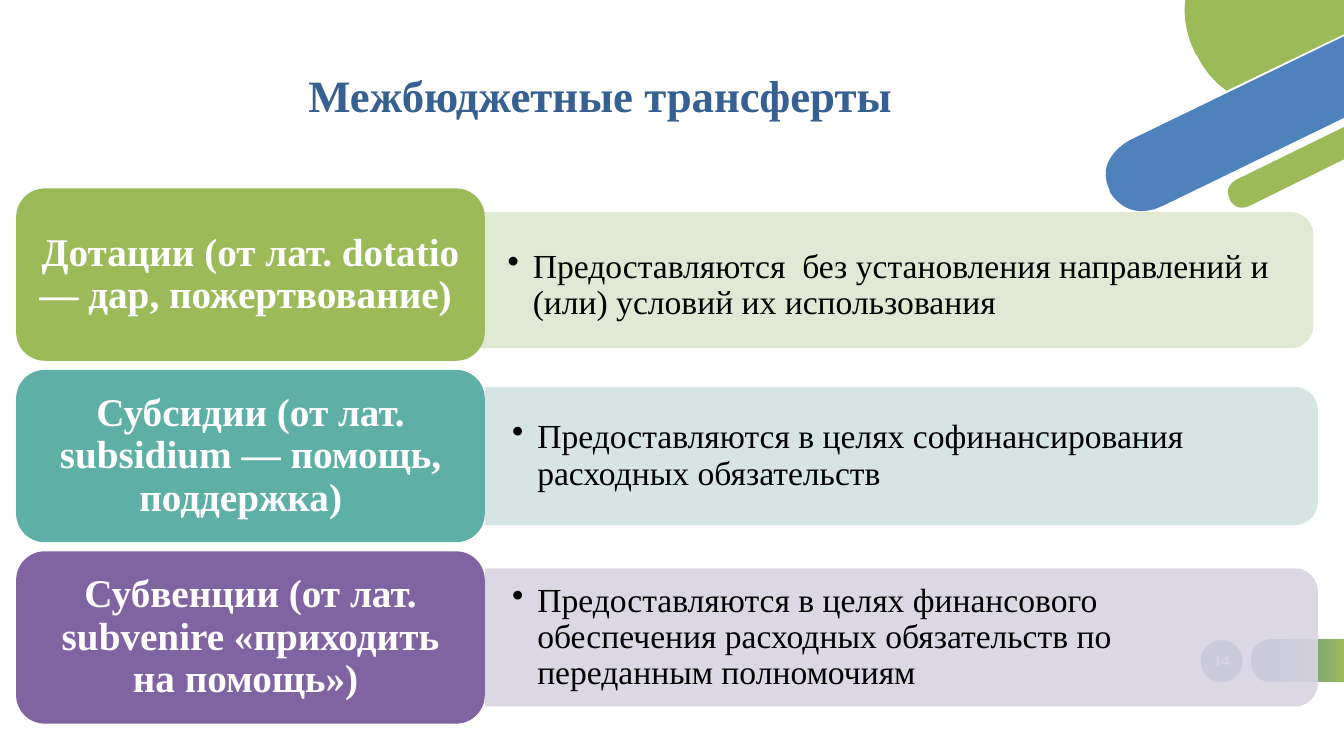
"""Build a slide that explains the three kinds of interbudget transfers."""
from lxml import etree
from pptx import Presentation
from pptx.dml.color import RGBColor
from pptx.enum.shapes import MSO_SHAPE as Preset
from pptx.enum.text import MSO_ANCHOR as Anchor, MSO_AUTO_SIZE as AutoSize, PP_ALIGN as Align
from pptx.oxml.ns import qn
from pptx.util import Pt

FONT = "Times New Roman"
WHITE = RGBColor(0xFF, 0xFF, 0xFF)
BLACK = RGBColor(0x00, 0x00, 0x00)
NAVY = RGBColor(0x37, 0x60, 0x92)
BLUE = RGBColor(0x4F, 0x81, 0xBD)
GREEN = RGBColor(0x9B, 0xBB, 0x59)
TEAL = RGBColor(0x5E, 0xAF, 0xA6)
PURPLE = RGBColor(0x80, 0x64, 0xA2)
PALE_GREEN = RGBColor(0xDE, 0xE7, 0xD1)
PALE_TEAL = RGBColor(0xD2, 0xE3, 0xE2)
PALE_PURPLE = RGBColor(0xD8, 0xD3, 0xE0)

TITLE = "Межбюджетные трансферты"
PAGE_NUMBER = "14"

# term, meaning, card colour, panel colour, panel left, panel height, panel drop, text drop
TRANSFERS = [
    ("Дотации (от лат. dotatio — дар, пожертвование) ",
     "Предоставляются  без установления направлений и (или) условий их использования",
     GREEN, PALE_GREEN, 343.4, 97.2, 4, 8),
    ("Субсидии (от лат. subsidium — помощь, поддержка)  ",
     "Предоставляются в целях софинансирования расходных обязательств",
     TEAL, PALE_TEAL, 346.6, 98.6, 0, 0),
    ("Субвенции (от лат. subvenire «приходить на помощь») ",
     "Предоставляются в целях финансового обеспечения расходных обязательств по переданным полномочиям",
     PURPLE, PALE_PURPLE, 346.6, 98.6, 0, 0),
]

LOBE = [(855.4, 40.3), (855.4, 40.3, 861.8, 54.7, 876.2, 64.8), (960, 24.5), (960, 0),
        (846.7, 0), (845.3, 10.8, 846.7, 23.8, 853.9, 38.2)]
BAND = [(807.1, 100.1), (807.1, 100.1, 781.2, 113, 792.7, 136.1), (792.7, 136.8),
        (792.7, 136.8, 804.2, 159.8, 830.9, 146.9), (960, 84.2), (960, 25.9)]
STRIP = [(960, 90.7), (883.4, 128.2), (883.4, 128.2, 873.4, 133.2, 878.4, 141.8),
         (878.4, 142.6), (878.4, 142.6, 882.7, 151.9, 892.8, 146.9), (960, 113.8)]
PILL = [(908.6, 487.4), (960, 487.4), (960, 456.5), (908.6, 456.5),
        (908.6, 456.5, 893.5, 456.5, 893.5, 471.6), (893.5, 472.3),
        (893.5, 472.3, 893.5, 487.4, 908.6, 487.4)]

CARD_LEFT, CARD_TOP, CARD_WIDTH, CARD_HEIGHT, CARD_PITCH = 11.5, 134.6, 334.8, 123.1, 129.6
PANEL_LENGTH, TEXT_WIDTH, TEXT_HEIGHT = 594.7, 590.4, 89.3
CURVE_STEPS = 12
FINE = 100


def trace(outline):
    """Return the outline's points with every cubic curve sampled."""
    points = [outline[0]]
    for step in outline[1:]:
        if len(step) == 2:
            points.append(step)
            continue
        controls = [points[-1], step[0:2], step[2:4], step[4:6]]
        for index in range(1, CURVE_STEPS + 1):
            t = index / CURVE_STEPS
            weights = ((1 - t) ** 3, 3 * t * (1 - t) ** 2, 3 * t * t * (1 - t), t ** 3)
            points.append(tuple(sum(w * c[axis] for w, c in zip(weights, controls))
                                for axis in (0, 1)))
    return [(x * FINE, y * FINE) for x, y in points]


def add_outline(slide, outline):
    """Add a closed freeform without line or shadow."""
    points = trace(outline)
    builder = slide.shapes.build_freeform(*points[0], scale=Pt(1) / FINE)
    builder.add_line_segments(points[1:], close=True)
    shape = builder.convert_to_shape()
    shape.shadow.inherit = False
    shape.line.fill.background()
    return shape


def add_preset(slide, preset, left, top, width, height, color):
    """Add a plain filled preset shape."""
    shape = slide.shapes.add_shape(preset, Pt(left), Pt(top), Pt(width), Pt(height))
    shape.shadow.inherit = False
    shape.fill.solid()
    shape.fill.fore_color.rgb = color
    shape.line.fill.background()
    return shape


def write(shape, text, size, color, bold=False, align=Align.LEFT, anchor=Anchor.MIDDLE,
          margins=(7.2, 3.6)):
    """Write one formatted paragraph into a shape and return it."""
    frame = shape.text_frame
    frame.word_wrap = True
    frame.auto_size = AutoSize.NONE
    frame.vertical_anchor = anchor
    frame.margin_left = frame.margin_right = Pt(margins[0])
    frame.margin_top = frame.margin_bottom = Pt(margins[1])
    paragraph = frame.paragraphs[0]
    paragraph.text = text
    paragraph.alignment = align
    paragraph.line_spacing = 0.9
    paragraph.font.name = FONT
    paragraph.font.size = Pt(size)
    paragraph.font.bold = bold
    paragraph.font.color.rgb = color
    return paragraph


def add_bullet(paragraph):
    """Give a paragraph a round bullet with a hanging indent."""
    properties = paragraph._p.get_or_add_pPr()
    properties.set("marL", str(Pt(18)))
    properties.set("indent", str(-Pt(18)))
    etree.SubElement(properties, qn("a:buChar")).set("char", "•")


def add_decoration(slide):
    """Add the page number, the pill and the corner shapes."""
    circle = add_preset(slide, Preset.OVAL, 857.5, 457.2, 30.2, 30.2, BLUE)
    write(circle, PAGE_NUMBER, 11, WHITE, align=Align.CENTER, margins=(0, 0))
    pill = add_outline(slide, PILL)
    pill.fill.gradient()
    pill.fill.gradient_angle = 0
    for stop, position, color in zip(pill.fill.gradient_stops, (0.12, 1), (BLUE, GREEN)):
        stop.position = position
        stop.color.rgb = color
    for outline, color in ((BAND, BLUE), (LOBE, GREEN), (STRIP, GREEN)):
        shape = add_outline(slide, outline)
        shape.fill.solid()
        shape.fill.fore_color.rgb = color


def add_transfer(slide, row, transfer):
    """Add one row: the panel with its meaning and the card with its term."""
    term, meaning, color, pale, left, height, panel_drop, text_drop = transfer
    top = CARD_TOP + row * CARD_PITCH
    middle = top + CARD_HEIGHT / 2
    center = left + PANEL_LENGTH / 2
    panel = add_preset(slide, Preset.ROUND_2_SAME_RECTANGLE, center - height / 2,
                       middle + panel_drop - PANEL_LENGTH / 2, height, PANEL_LENGTH, pale)
    panel.rotation = 90
    tint = panel._element.spPr.find(qn("a:solidFill"))[0]
    etree.SubElement(tint, qn("a:alpha")).set("val", "90000")
    box = slide.shapes.add_textbox(Pt(left), Pt(middle + text_drop - TEXT_HEIGHT / 2),
                                   Pt(TEXT_WIDTH), Pt(TEXT_HEIGHT))
    add_bullet(write(box, meaning, 24, BLACK, margins=(19.2, 9.6)))
    card = add_preset(slide, Preset.ROUNDED_RECTANGLE, CARD_LEFT, top,
                      CARD_WIDTH, CARD_HEIGHT, color)
    write(card, term, 28, WHITE, bold=True, align=Align.CENTER, margins=(8.4, 4.2))


def main():
    """Build and save the presentation."""
    presentation = Presentation()
    presentation.slide_width, presentation.slide_height = Pt(960), Pt(540)
    slide = presentation.slides.add_slide(presentation.slide_layouts[5])
    add_decoration(slide)
    title = slide.shapes.title
    title.left, title.top, title.width, title.height = Pt(213), Pt(49), Pt(746), Pt(65.5)
    write(title, TITLE, 32, NAVY, bold=True, anchor=Anchor.TOP)
    for row, transfer in enumerate(TRANSFERS):
        add_transfer(slide, row, transfer)
    presentation.save("out.pptx")


if __name__ == "__main__":
    main()
